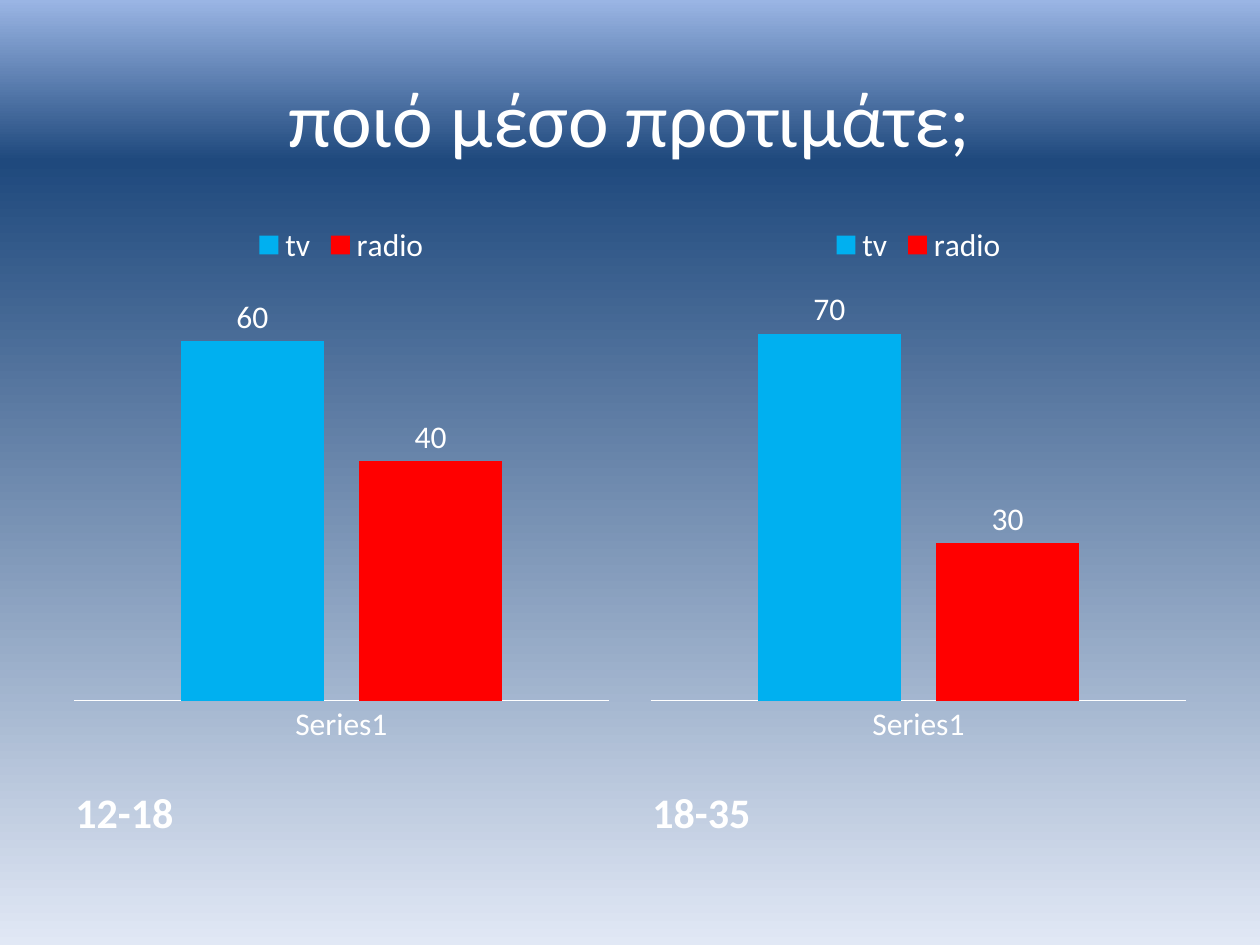
import copy

import pptx
import pptx.chart.data
import pptx.dml.color
import pptx.enum.chart
import pptx.enum.text
import pptx.util

Pt = pptx.util.Pt
RGBColor = pptx.dml.color.RGBColor
PP_ALIGN = pptx.enum.text.PP_ALIGN
MSO_ANCHOR = pptx.enum.text.MSO_ANCHOR
XL = pptx.enum.chart

WHITE = RGBColor(0xFF, 0xFF, 0xFF)
SKY = RGBColor(0x00, 0xB0, 0xF0)
RED = RGBColor(0xFF, 0x00, 0x00)
BACKGROUND = [
    (0, RGBColor(0x9A, 0xB5, 0xE4)),
    (0.17, RGBColor(0x1F, 0x49, 0x7D)),
    (1, RGBColor(0xE1, 0xE8, 0xF5)),
]

# Content
TITLE = "ποιό μέσο προτιμάτε;"
CATEGORY = "Series1"
MEDIA = [("tv", SKY), ("radio", RED)]
GROUPS = [  # age group, value per medium, axis maximum
    ("12-18", (60, 40), 70),
    ("18-35", (70, 30), 80),
]

# Layout in points
SLIDE_W, SLIDE_H = 720, 540
MARGIN = 36
COLUMN_W = 318.24
COLUMN_STEP = SLIDE_W - 2 * MARGIN - COLUMN_W
TITLE_TOP, TITLE_H = 21.6, 90
CHART_TOP, CHART_H = 120.24, 311.04
LABEL_H = 50.4

TITLE_FONT = {"name": "Calibri", "size": Pt(44)}
LABEL_FONT = {"name": "Calibri", "size": Pt(24), "bold": True}
CHART_FONT = {"name": "Calibri", "size": Pt(18)}


def set_font(font, values):
    for name, value in values.items():
        setattr(font, name, value)
    font.color.rgb = WHITE


def add_text(s, text, box, font, anchor, align, space_before=0):
    tf = s.shapes.add_textbox(*map(Pt, box)).text_frame
    tf.word_wrap = True
    tf.vertical_anchor = anchor
    p = tf.paragraphs[0]
    p.alignment = align
    p.space_before = Pt(space_before)
    r = p.add_run()
    r.text = text
    set_font(r.font, font)


def add_columns(s, values, maximum, box):
    data = pptx.chart.data.CategoryChartData()
    data.categories = [CATEGORY]
    for (name, _), value in zip(MEDIA, values):
        data.add_series(name, [value])
    chart = s.shapes.add_chart(
        XL.XL_CHART_TYPE.COLUMN_CLUSTERED, *map(Pt, box), data).chart
    set_font(chart.font, CHART_FONT)
    chart.has_title = False

    chart.has_legend = True
    chart.legend.position = XL.XL_LEGEND_POSITION.TOP
    chart.legend.include_in_layout = False

    axis = chart.value_axis
    for name, value in {"minimum_scale": 0, "maximum_scale": maximum,
                        "has_major_gridlines": False, "visible": False}.items():
        setattr(axis, name, value)
    axis = chart.category_axis
    axis.major_tick_mark = XL.XL_TICK_MARK.NONE
    axis.format.line.color.rgb = WHITE
    axis.format.line.width = Pt(0.75)

    plot = chart.plots[0]
    for name, value in {"gap_width": 150, "overlap": -25,
                        "vary_by_categories": False,
                        "has_data_labels": True}.items():
        setattr(plot, name, value)
    plot.data_labels.show_value = True
    plot.data_labels.position = XL.XL_LABEL_POSITION.OUTSIDE_END
    for series, (_, color) in zip(plot.series, MEDIA):
        series.format.fill.solid()
        series.format.fill.fore_color.rgb = color


prs = pptx.Presentation()
prs.slide_width, prs.slide_height = Pt(SLIDE_W), Pt(SLIDE_H)
s = prs.slides.add_slide(prs.slide_layouts[6])

# Background gradient, top to bottom
fill = s.background.fill
fill.gradient()
fill.gradient_angle = 270
stop_list = s._element.xpath(".//p:bg//a:gsLst")[0]
stop_list.append(copy.deepcopy(stop_list[-1]))
for stop, (position, color) in zip(fill.gradient_stops, BACKGROUND):
    stop.position = position
    stop.color.rgb = color

# Title
add_text(s, TITLE, (MARGIN, TITLE_TOP, SLIDE_W - 2 * MARGIN, TITLE_H),
         TITLE_FONT, MSO_ANCHOR.MIDDLE, PP_ALIGN.CENTER)

# One chart and its age label per column
for i, (label, values, maximum) in enumerate(GROUPS):
    left = MARGIN + i * COLUMN_STEP
    add_text(s, label, (left, CHART_TOP + CHART_H, COLUMN_W, LABEL_H),
             LABEL_FONT, MSO_ANCHOR.BOTTOM, PP_ALIGN.LEFT, space_before=4.8)
    add_columns(s, values, maximum, (left, CHART_TOP, COLUMN_W, CHART_H))

prs.save("out.pptx")
